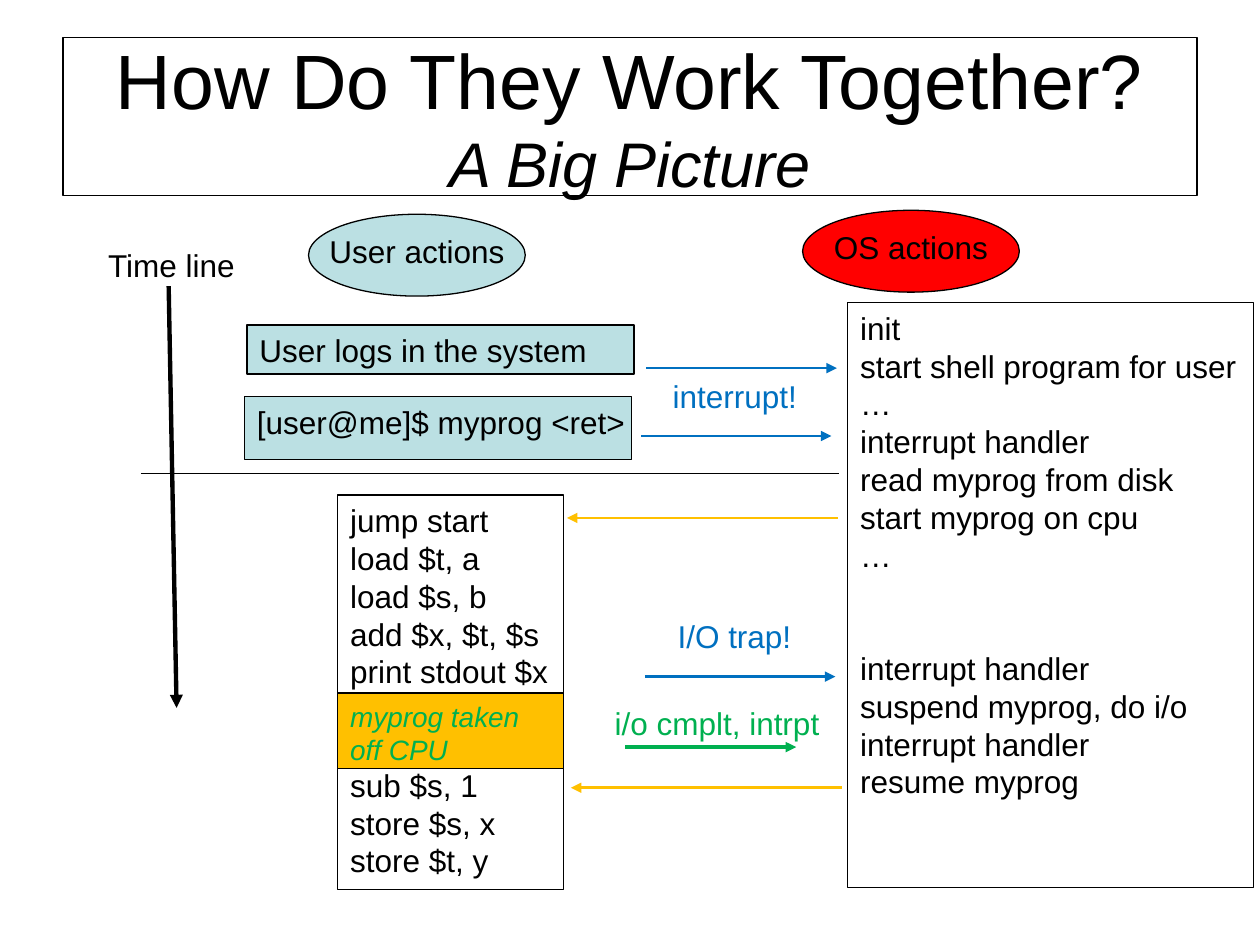
from dataclasses import dataclass
from typing import NamedTuple, Optional

from lxml.etree import SubElement
from pptx import Presentation
from pptx.dml.color import RGBColor
from pptx.enum.shapes import MSO_CONNECTOR as Connector, MSO_SHAPE as Preset
from pptx.enum.text import MSO_ANCHOR as Anchor, PP_ALIGN as Align
from pptx.oxml.ns import qn
from pptx.util import Cm, Pt


@dataclass(frozen=True)
class Theme:
    font: str = "Arial"
    ink: str = "000000"
    user: str = "BBE0E3"
    system: str = "FF0000"
    trap: str = "0070C0"
    resume: str = "FFC000"
    done: str = "00B050"
    title: int = 44
    subtitle: int = 36
    body: int = 18
    note: int = 16
    leading: float = 1.2
    outline: float = 0.75
    flow: float = 1.5


THEME = Theme()


class Area(NamedTuple):
    left: float
    top: float
    width: float
    height: float


@dataclass(frozen=True)
class Box:
    area: Area
    blocks: tuple  # groups of lines, set apart by two line heights
    fill: Optional[str] = None
    preset: Preset = Preset.RECTANGLE
    align: Align = Align.LEFT
    color: str = THEME.ink
    size: int = THEME.body
    italic: bool = False


@dataclass(frozen=True)
class Label:
    area: Area
    text: str
    color: str = THEME.ink


@dataclass(frozen=True)
class Line:
    start: tuple
    end: tuple
    color: str
    width: float = THEME.flow
    arrow: bool = True


def add_run(paragraph, text: str, size: int, color: str, italic: bool = False) -> None:
    run = paragraph.add_run()
    run.text = text
    run.font.name = THEME.font
    run.font.size = Pt(size)
    run.font.italic = italic
    run.font.color.rgb = RGBColor.from_string(color)


def add_frame(slide, area: Area, preset: Preset, fill: Optional[str]):
    shape = slide.shapes.add_shape(preset, *map(Cm, area))
    shape.shadow.inherit = False
    if fill:
        shape.fill.solid()
        shape.fill.fore_color.rgb = RGBColor.from_string(fill)
    else:
        shape.fill.background()
    shape.line.color.rgb = RGBColor.from_string(THEME.ink)
    shape.line.width = Pt(THEME.outline)
    return shape


def draw_title(slide, area: Area, heading: str, subtitle: str) -> None:
    frame = add_frame(slide, area, Preset.RECTANGLE, None).text_frame
    frame.word_wrap = True
    frame.vertical_anchor = Anchor.MIDDLE
    paragraph = frame.paragraphs[0]
    paragraph.alignment = Align.CENTER
    add_run(paragraph, heading, THEME.title, THEME.ink)
    paragraph.add_line_break()
    add_run(paragraph, subtitle, THEME.subtitle, THEME.ink, italic=True)


def draw_box(slide, box: Box) -> None:
    frame = add_frame(slide, box.area, box.preset, box.fill).text_frame
    frame.word_wrap = False
    frame.vertical_anchor = Anchor.TOP
    pitch = box.size * THEME.leading
    paragraph = None
    for block_no, block in enumerate(box.blocks):
        for line_no, text in enumerate(block):
            paragraph = frame.add_paragraph() if paragraph else frame.paragraphs[0]
            paragraph.alignment = box.align
            paragraph.line_spacing = Pt(pitch)
            if block_no and not line_no:
                paragraph.space_before = Pt(2 * pitch)
            add_run(paragraph, text, box.size, box.color, box.italic)


def draw_label(slide, label: Label) -> None:
    frame = slide.shapes.add_textbox(*map(Cm, label.area)).text_frame
    frame.word_wrap = False
    paragraph = frame.paragraphs[0]
    paragraph.line_spacing = Pt(THEME.body * THEME.leading)
    add_run(paragraph, label.text, THEME.body, label.color)


def draw_line(slide, line: Line) -> None:
    connector = slide.shapes.add_connector(
        Connector.STRAIGHT, *map(Cm, line.start + line.end))
    connector.line.color.rgb = RGBColor.from_string(line.color)
    connector.line.width = Pt(line.width)
    if line.arrow:
        SubElement(connector.line._get_or_add_ln(), qn("a:tailEnd"), type="triangle")
    SubElement(connector._element.spPr, qn("a:effectLst"))


# Actors and what each of them does
BOXES = (
    Box(Area(17.09, 6.1, 8.18, 11.79), (
        ("init", "start shell program for user", "…", "interrupt handler",
         "read myprog from disk", "start myprog on cpu", "…"),
        ("interrupt handler", "suspend myprog, do i/o",
         "interrupt handler", "resume myprog"))),
    Box(Area(6.22, 4.32, 4.37, 1.65), (("User actions",),),
        THEME.user, Preset.OVAL, Align.CENTER),
    Box(Area(16.18, 4.24, 4.37, 1.65), (("OS actions",),),
        THEME.system, Preset.OVAL, Align.CENTER),
    Box(Area(4.98, 6.55, 7.8, 0.99), (("User logs in the system",),), THEME.user),
    Box(Area(4.93, 8, 7.8, 1.27), (("[user@me]$ myprog <ret>",),), THEME.user),
    Box(Area(6.81, 9.98, 4.55, 7.95), (
        ("jump start", "load $t, a", "load $s, b", "add $x, $t, $s",
         "print stdout $x"),
        ("sub $s, 1", "store $s, x", "store $t, y"))),
    Box(Area(6.81, 13.97, 4.55, 1.52), (("myprog taken", "off CPU"),),
        THEME.resume, color=THEME.done, size=THEME.note, italic=True),
)

LABELS = (
    Label(Area(1.93, 4.83, 3.1, 1.02), "Time line"),
    Label(Area(13.31, 7.47, 3.05, 1.02), "interrupt!", THEME.trap),
    Label(Area(13.41, 12.32, 2.82, 1.02), "I/O trap!", THEME.trap),
    Label(Area(12.14, 14.07, 4.67, 1.02), "i/o cmplt, intrpt", THEME.done),
)

LINES = (
    # Time line and the divider across it
    Line((3.4, 5.77), (3.56, 14.27), THEME.ink, 2.5),
    Line((2.84, 9.55), (16.92, 9.55), THEME.ink, 0.5, arrow=False),
    # User to OS
    Line((13.03, 7.42), (16.87, 7.42), THEME.trap),
    Line((12.93, 8.79), (16.76, 8.79), THEME.trap),
    Line((13, 13.64), (16.84, 13.64), THEME.trap),
    Line((12.6, 15.06), (16.05, 15.06), THEME.done, 2),
    # OS back to user
    Line((16.89, 10.44), (11.43, 10.44), THEME.resume),
    Line((16.97, 15.88), (11.51, 15.88), THEME.resume),
)


def main() -> None:
    deck = Presentation()
    deck.slide_width, deck.slide_height = Cm(25.4), Cm(19.05)
    slide = deck.slides.add_slide(deck.slide_layouts[6])
    draw_title(slide, Area(1.27, 0.76, 22.86, 3.18),
               "How Do They Work Together?", "A Big Picture")
    for box in BOXES:
        draw_box(slide, box)
    for label in LABELS:
        draw_label(slide, label)
    for line in LINES:
        draw_line(slide, line)
    deck.save("out.pptx")


if __name__ == "__main__":
    main()
